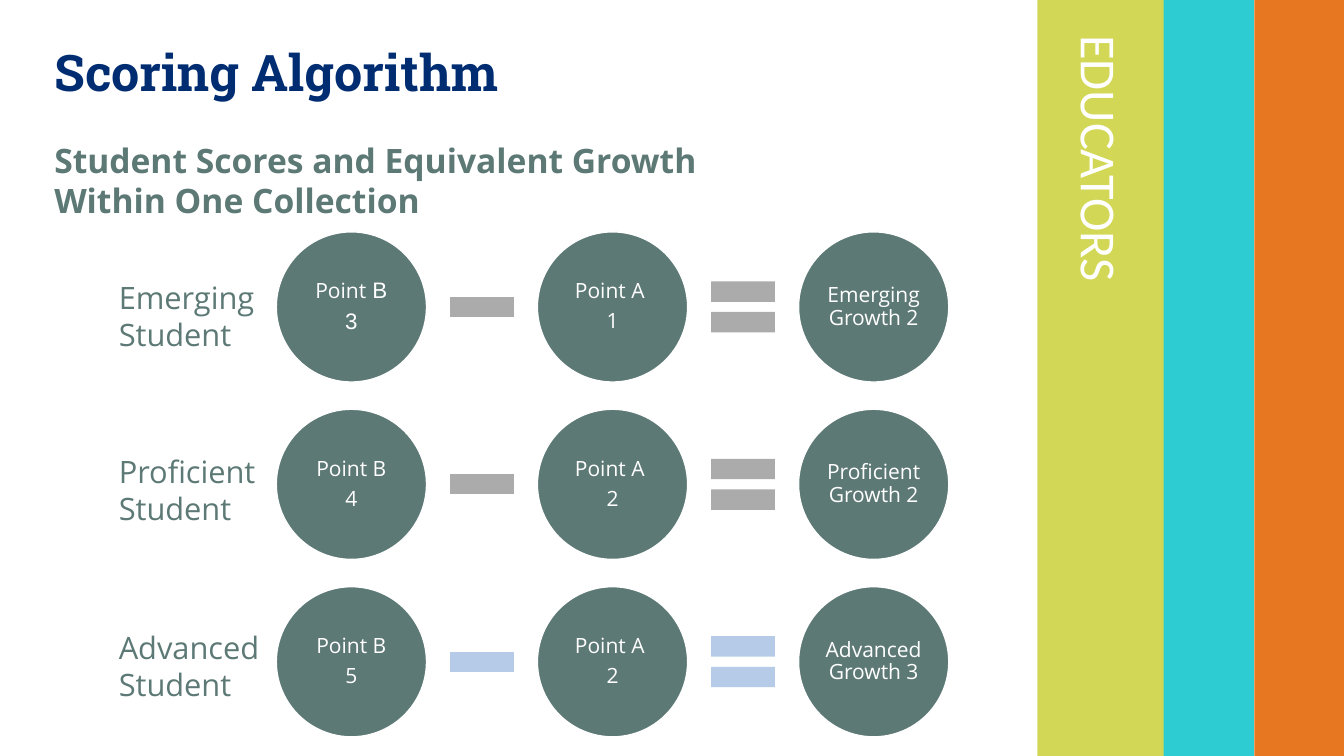
"""Build the scoring algorithm slide with its three growth equations."""
from dataclasses import dataclass
from typing import Optional

import pptx
import pptx.dml.color
import pptx.enum.shapes
import pptx.enum.text
import pptx.util

Inches, Pt = pptx.util.Inches, pptx.util.Pt
SHAPE = pptx.enum.shapes.MSO_SHAPE
ALIGN = pptx.enum.text.PP_ALIGN
ANCHOR = pptx.enum.text.MSO_ANCHOR

COLORS = {
    "white": "FFFFFF", "navy": "002D72", "sage": "5D7975", "gray": "ABABAB",
    "pale_blue": "B5CBE7", "lime": "D2D755", "aqua": "2DCCD3", "orange": "E87722",
}
ROW_TOP, ROW_PITCH = 2.3, 1.76
COL_LEFT, COL_PITCH = 2.74, 2.59
CIRCLE, SIGN, SIGN_SHIFT = 1.49, 0.86, 1.61


@dataclass
class Band:
    """A vertical stripe at the right edge."""
    left: float
    width: float
    color: str


@dataclass
class Equation:
    """One student level: point B minus point A equals growth."""
    level: str
    point_b: int
    point_a: int
    sign_color: str
    label_top: float
    alt_font: Optional[str] = None

    @property
    def terms(self) -> list[list[str]]:
        """Return the paragraphs of the three circles."""
        growth = self.point_b - self.point_a
        return [["Point B", str(self.point_b)], ["Point A ", str(self.point_a)],
                [f"{self.level} Growth {growth}"]]


BANDS = [Band(10.29, 1.26, "lime"), Band(11.54, 0.9, "aqua"), Band(12.44, 0.89, "orange")]
EQUATIONS = [
    Equation("Emerging", 3, 1, "gray", 2.72, "Arial"),
    Equation("Proficient", 4, 2, "gray", 4.44),
    Equation("Advanced", 5, 2, "pale_blue", 6.19),
]


def rgb(name: str) -> pptx.dml.color.RGBColor:
    """Return the named colour."""
    return pptx.dml.color.RGBColor.from_string(COLORS[name])


def set_font(font, size: float, name: str, color: str, bold: bool = False) -> None:
    """Set size, typeface, colour and weight of a font."""
    font.size, font.name, font.bold = Pt(size), name, bold
    font.color.rgb = rgb(color)


def add_shape(shapes, kind, left: float, top: float, width: float, height: float, color: str):
    """Add a flat filled shape without an outline."""
    sp = shapes.add_shape(kind, Inches(left), Inches(top), Inches(width), Inches(height))
    sp.shadow.inherit = False
    sp.fill.solid()
    sp.fill.fore_color.rgb = rgb(color)
    sp.line.fill.background()
    return sp


def add_text(shapes, text: str, left: float, top: float, width: float, height: float,
             size: float, name: str, color: str, bold: bool = False):
    """Add a wrapped one-paragraph text box."""
    sp = shapes.add_textbox(Inches(left), Inches(top), Inches(width), Inches(height))
    sp.text_frame.word_wrap = True
    p = sp.text_frame.paragraphs[0]
    p.text = text
    set_font(p.font, size, name, color, bold)
    return sp


def add_circle(shapes, lines: list[str], left: float, top: float):
    """Add a circle with its centred lines."""
    sp = add_shape(shapes, SHAPE.OVAL, left, top, CIRCLE, CIRCLE, "sage")
    sp.line.color.rgb = rgb("white")
    sp.line.width = Pt(1)
    tf = sp.text_frame
    tf.word_wrap = True
    tf.vertical_anchor = ANCHOR.MIDDLE
    tf.margin_left = tf.margin_right = tf.margin_top = tf.margin_bottom = Inches(0.02)
    tf.text = "\n".join(lines)
    for p in tf.paragraphs:
        p.alignment = ALIGN.CENTER
        p.line_spacing = 0.9
        p.space_after = Pt(5.25)
        set_font(p.font, 15, "Open Sans", "white")
    return sp


def use_alt_font(tf, name: str) -> None:
    """Set the point letter and the score in another typeface."""
    head, score = tf.paragraphs
    word, letter = head.text.split(" ")
    head.runs[0].text = word
    r = head.add_run()
    r.text = f" {letter}"
    set_font(r.font, 16, name, "white")
    set_font(score.font, 16, name, "white")


def add_equation(s, eq: Equation, top: float) -> None:
    """Add the grouped circles and signs of one row, and its label."""
    shapes = s.shapes.add_group_shape().shapes
    sign_top = top + (CIRCLE - SIGN) / 2
    signs = [SHAPE.MATH_MINUS, SHAPE.MATH_EQUAL]
    for i, lines in enumerate(eq.terms):
        left = COL_LEFT + i * COL_PITCH
        sp = add_circle(shapes, lines, left, top)
        if i == 0 and eq.alt_font:
            use_alt_font(sp.text_frame, eq.alt_font)
        if i < len(signs):
            add_shape(shapes, signs[i], left + SIGN_SHIFT, sign_top, SIGN, SIGN, eq.sign_color)
    add_text(s.shapes, f"{eq.level} Student", 1.08, eq.label_top, 1.61, 0.84,
             22, "Open Sans", "sage")


def add_title(s, text: str) -> None:
    """Place and format the title."""
    sp = s.shapes.title
    sp.left, sp.top, sp.width, sp.height = Inches(0.44), Inches(0.25), Inches(8.95), Inches(1)
    tf = sp.text_frame
    tf.text = text
    tf.vertical_anchor = ANCHOR.MIDDLE
    p = tf.paragraphs[0]
    p.alignment = ALIGN.LEFT
    p.line_spacing = 0.9
    set_font(p.font, 36, "Roboto Slab", "navy", True)


def main() -> None:
    """Build and save the presentation."""
    prs = pptx.Presentation()
    prs.slide_width, prs.slide_height = Inches(13.33), Inches(7.5)
    s = prs.slides.add_slide(prs.slide_layouts[5])
    add_title(s, "Scoring Algorithm")
    for band in BANDS:
        add_shape(s.shapes, SHAPE.RECTANGLE, band.left, 0, band.width, 7.5, band.color)
    side = add_text(s.shapes, "EDUCATORS", 8.62, 2.19, 4.59, 0.71, 36, "Calibri", "white")
    side.rotation = 90
    add_text(s.shapes, "Student Scores and Equivalent Growth \vWithin One Collection",
             0.44, 1.34, 10.93, 0.91, 24, "Open Sans", "sage", True)
    for i, eq in enumerate(EQUATIONS):
        add_equation(s, eq, ROW_TOP + i * ROW_PITCH)
    prs.save("out.pptx")


if __name__ == "__main__":
    main()
